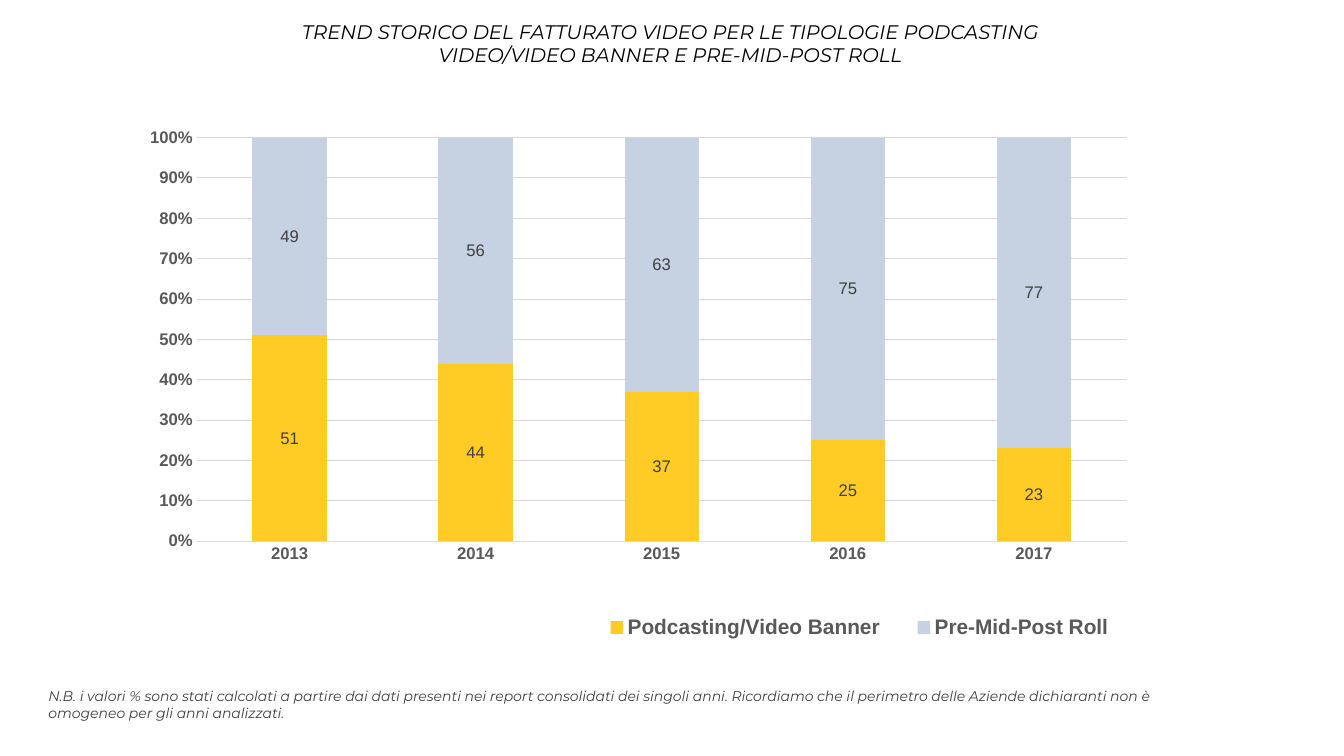
from dataclasses import dataclass

from lxml.etree import _Element as Node
from pptx import Presentation
from pptx.chart.chart import Chart
from pptx.chart.data import CategoryChartData as Data
from pptx.dml.color import RGBColor as Rgb
from pptx.dml.fill import FillFormat as Fill
from pptx.enum.chart import XL_CHART_TYPE as Kind
from pptx.enum.chart import XL_LABEL_POSITION as Spot
from pptx.enum.chart import XL_LEGEND_POSITION as Side
from pptx.enum.chart import XL_TICK_MARK as Tick
from pptx.enum.text import MSO_ANCHOR as Anchor
from pptx.enum.text import MSO_AUTO_SIZE as Auto
from pptx.enum.text import PP_ALIGN as Align
from pptx.oxml import parse_xml
from pptx.oxml.ns import nsdecls, qn
from pptx.text.text import Font
from pptx.util import Cm, Pt


@dataclass
class Box:
    left: float
    top: float
    width: float
    height: float

    def cm(self) -> tuple[Cm, Cm, Cm, Cm]:
        return Cm(self.left), Cm(self.top), Cm(self.width), Cm(self.height)


@dataclass
class Series:
    name: str
    color: str
    shares: list[float]


YEARS = ["2013", "2014", "2015", "2016", "2017"]
SERIES = [
    Series("Podcasting/Video Banner", "FFCB25", [0.51, 0.44, 0.37, 0.25, 0.23]),
    Series("Pre-Mid-Post Roll ", "C6D1E2", [0.49, 0.56, 0.63, 0.75, 0.77]),
]
TITLE = ("TREND STORICO DEL FATTURATO VIDEO PER LE TIPOLOGIE PODCASTING "
         "VIDEO/VIDEO BANNER E PRE-MID-POST ROLL")
NOTE = ("N.B. i valori % sono stati calcolati a partire dai dati presenti nei report "
        "consolidati dei singoli anni. Ricordiamo che il perimetro delle Aziende "
        "dichiaranti non è omogeneo per gli anni analizzati.")
GRAY, RULE, DARK = "595959", "D9D9D9", "404040"


def paint(fill: Fill, color: str) -> None:
    fill.solid()
    fill.fore_color.rgb = Rgb.from_string(color)


def style(font: Font, size: float, color: str, name: str = "Arial",
          bold: bool = False, italic: bool = False) -> None:
    font.name, font.size, font.bold, font.italic = name, Pt(size), bold, italic
    paint(font.fill, color)


def place(node: Node, index: int, percent: Box, inner: bool = False) -> None:
    for old in node.findall(qn("c:layout")):
        node.remove(old)
    target = '<c:layoutTarget val="inner"/>' if inner else ""
    node.insert(index, parse_xml(
        f'<c:layout {nsdecls("c")}><c:manualLayout>{target}'
        '<c:xMode val="edge"/><c:yMode val="edge"/>'
        f'<c:x val="{percent.left / 100}"/><c:y val="{percent.top / 100}"/>'
        f'<c:w val="{percent.width / 100}"/><c:h val="{percent.height / 100}"/>'
        '</c:manualLayout></c:layout>'))


def dress(chart: Chart) -> None:
    chart.has_title = False
    style(chart.font, 10, "000000")
    for axis in (chart.category_axis, chart.value_axis):
        axis.major_tick_mark = axis.minor_tick_mark = Tick.NONE
        style(axis.tick_labels.font, 12, GRAY, bold=True)
    base, scale = chart.category_axis.format.line, chart.value_axis
    grid = scale.major_gridlines.format.line
    for line in (base, grid):
        paint(line.fill, RULE)
        line.width = Pt(0.75)
    scale.format.line.fill.background()
    scale.minimum_scale, scale.maximum_scale, scale.major_unit = 0, 1, 0.1
    scale.tick_labels.number_format = "0%"
    scale.tick_labels.number_format_is_linked = False

    plot = chart.plots[0]
    plot.gap_width, plot.overlap, plot.vary_by_categories = 150, 100, False
    for series, bar in zip(SERIES, plot.series):
        paint(bar.format.fill, series.color)
        labels = bar.data_labels
        labels.show_value, labels.position = True, Spot.CENTER
        style(labels.font, 12, DARK)
        for index, share in enumerate(series.shares):
            label = bar.points[index].data_label
            label.text_frame.text = f"{share * 100:.0f}"
            label.position = Spot.CENTER
            style(label.text_frame.paragraphs[0].font, 12, DARK)

    chart.has_legend = True
    chart.legend.position = Side.BOTTOM
    chart.legend.include_in_layout = False
    style(chart.legend.font, 15, GRAY, bold=True)
    root = chart.element
    place(root.find(".//" + qn("c:plotArea")), 0, Box(3.9, 2.7, 93.9, 74.4), True)
    place(root.find(".//" + qn("c:legend")), 1, Box(42.6, 89, 57, 8))


def main() -> None:
    deck = Presentation()
    deck.slide_width, deck.slide_height = Cm(33.87), Cm(19.05)
    slide = deck.slides.add_slide(deck.slide_layouts[5])

    title = slide.shapes.title
    title.left, title.top, title.width, title.height = Box(5.84, 0.48, 22.12, 1.22).cm()
    frame = title.text_frame
    frame.text = TITLE
    frame.auto_size, frame.vertical_anchor = Auto.NONE, Anchor.MIDDLE
    frame.margin_left = frame.margin_right = frame.margin_top = frame.margin_bottom = 0
    head = frame.paragraphs[0]
    head.alignment = Align.CENTER
    style(head.font, 14, "000000", "Montserrat", italic=True)

    data = Data(number_format="0%")
    data.categories = YEARS
    for series in SERIES:
        data.add_series(series.name, series.shares)
    chart = slide.shapes.add_chart(
        Kind.COLUMN_STACKED_100, *Box(3.78, 3.1, 25.17, 13.67).cm(), data).chart
    dress(chart)

    note = slide.shapes.add_textbox(*Box(0.97, 17.2, 29.85, 1.12).cm()).text_frame
    note.word_wrap, note.auto_size = True, Auto.SHAPE_TO_FIT_TEXT
    note.text = NOTE
    style(note.paragraphs[0].font, 10, DARK, "Montserrat", italic=True)

    deck.save("out.pptx")


if __name__ == "__main__":
    main()
